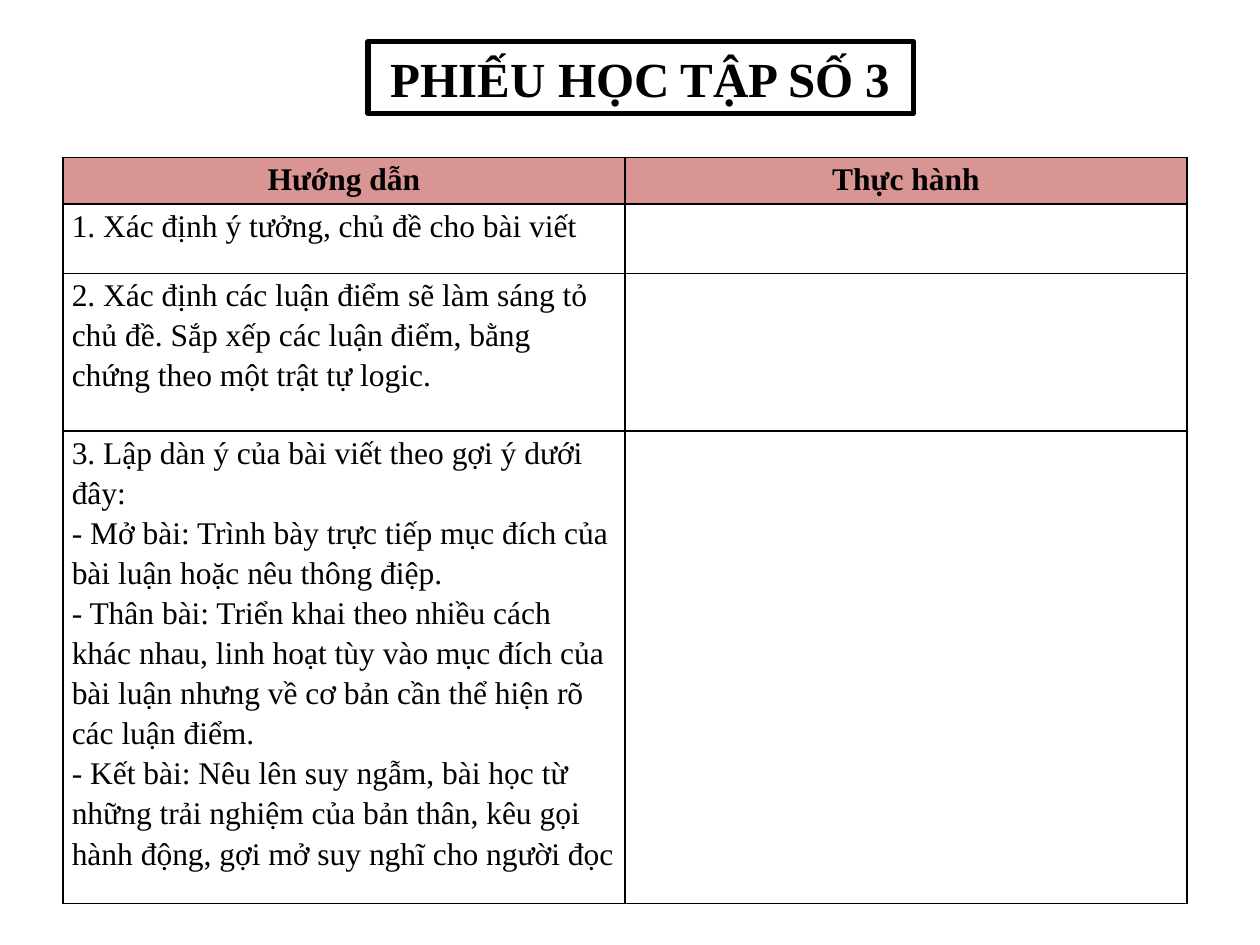
from lxml import etree
from pptx import Presentation
from pptx import util as u
from pptx.dml.color import RGBColor
from pptx.enum import shapes, text
from pptx.oxml.ns import qn

FONT = "Times New Roman"
BLACK, ROSE = "000000", "D99594"
SLIDE_W, SLIDE_H = 10, 7.5
TITLE_BOX = (2.92, 0.33, 4.33, 0.57)
TABLE_BOX = (0.5, 1.25, 8.92, 5.92)
ROW_HEIGHTS = (0.37, 0.55, 1.25, 3.75)

HEADINGS = ("Hướng dẫn", "Thực hành")
STEPS = (
    ("1. Xác định ý tưởng, chủ đề cho bài viết",),
    ("2. Xác định các luận điểm sẽ làm sáng tỏ chủ đề. Sắp xếp các luận điểm, "
     "bằng chứng theo một trật tự logic.",),
    ("3. Lập dàn ý của bài viết theo gợi ý dưới đây:",
     "- Mở bài: Trình bày trực tiếp mục đích của bài luận hoặc nêu thông điệp.",
     "- Thân bài: Triển khai theo nhiều cách khác nhau, linh hoạt tùy vào mục đích "
     "của bài luận nhưng về cơ bản cần thể hiện rõ các luận điểm.",
     "- Kết bài: Nêu lên suy ngẫm, bài học từ những trải nghiệm của bản thân, "
     "kêu gọi hành động, gợi mở suy nghĩ cho người đọc"),
)


def color(value):
    return RGBColor.from_string(value)


def write(frame, lines, size, bold=False, centred=False, spacing=1.0):
    frame.text = "\n".join(lines)
    for paragraph in frame.paragraphs:
        paragraph.alignment = text.PP_ALIGN.CENTER if centred else text.PP_ALIGN.LEFT
        paragraph.line_spacing = spacing
        font = paragraph.font
        font.name, font.size, font.bold = FONT, u.Pt(size), bold
        font.color.rgb = color(BLACK)


def add_borders(cell, line_color, points):
    properties = cell._tc.get_or_add_tcPr()
    for position, side in enumerate(("a:lnL", "a:lnR", "a:lnT", "a:lnB")):
        line = etree.Element(qn(side), w=str(u.Pt(points)))
        fill = etree.SubElement(line, qn("a:solidFill"))
        etree.SubElement(fill, qn("a:srgbClr"), val=line_color)
        properties.insert(position, line)


def add_title(slide, box):
    title = slide.shapes.add_shape(shapes.MSO_SHAPE.RECTANGLE, *map(u.Inches, box))
    title.shadow.inherit = False
    title.fill.background()
    title.line.color.rgb = color(BLACK)
    title.line.width = u.Pt(3)
    title.text_frame.vertical_anchor = text.MSO_ANCHOR.MIDDLE
    title.text_frame.word_wrap = True
    write(title.text_frame, ["PHIẾU HỌC TẬP SỐ 3"], 28, bold=True, centred=True)


def add_worksheet(slide, box):
    """Steps on the left, room for the pupil's answers on the right."""
    rows = [[(heading,) for heading in HEADINGS]] + [[step, ()] for step in STEPS]
    table = slide.shapes.add_table(len(rows), len(HEADINGS), *map(u.Inches, box)).table
    table.first_row = table.horz_banding = False
    for column in table.columns:
        column.width = u.Inches(box[2] / len(HEADINGS))
    for r, (height, row) in enumerate(zip(ROW_HEIGHTS, rows)):
        table.rows[r].height = u.Inches(height)
        is_heading = r == 0
        for c, lines in enumerate(row):
            cell = table.cell(r, c)
            cell.margin_left = cell.margin_right = u.Inches(0.07)
            cell.margin_top = cell.margin_bottom = 0
            if is_heading:
                cell.fill.solid()
                cell.fill.fore_color.rgb = color(ROSE)
            else:
                cell.fill.background()
            add_borders(cell, BLACK, 1)
            write(cell.text_frame, lines, 18, is_heading, is_heading, 1.15)


def main():
    deck = Presentation()
    deck.slide_width, deck.slide_height = u.Inches(SLIDE_W), u.Inches(SLIDE_H)
    slide = deck.slides.add_slide(deck.slide_layouts[6])
    add_worksheet(slide, TABLE_BOX)
    add_title(slide, TITLE_BOX)
    deck.save("out.pptx")


if __name__ == "__main__":
    main()
